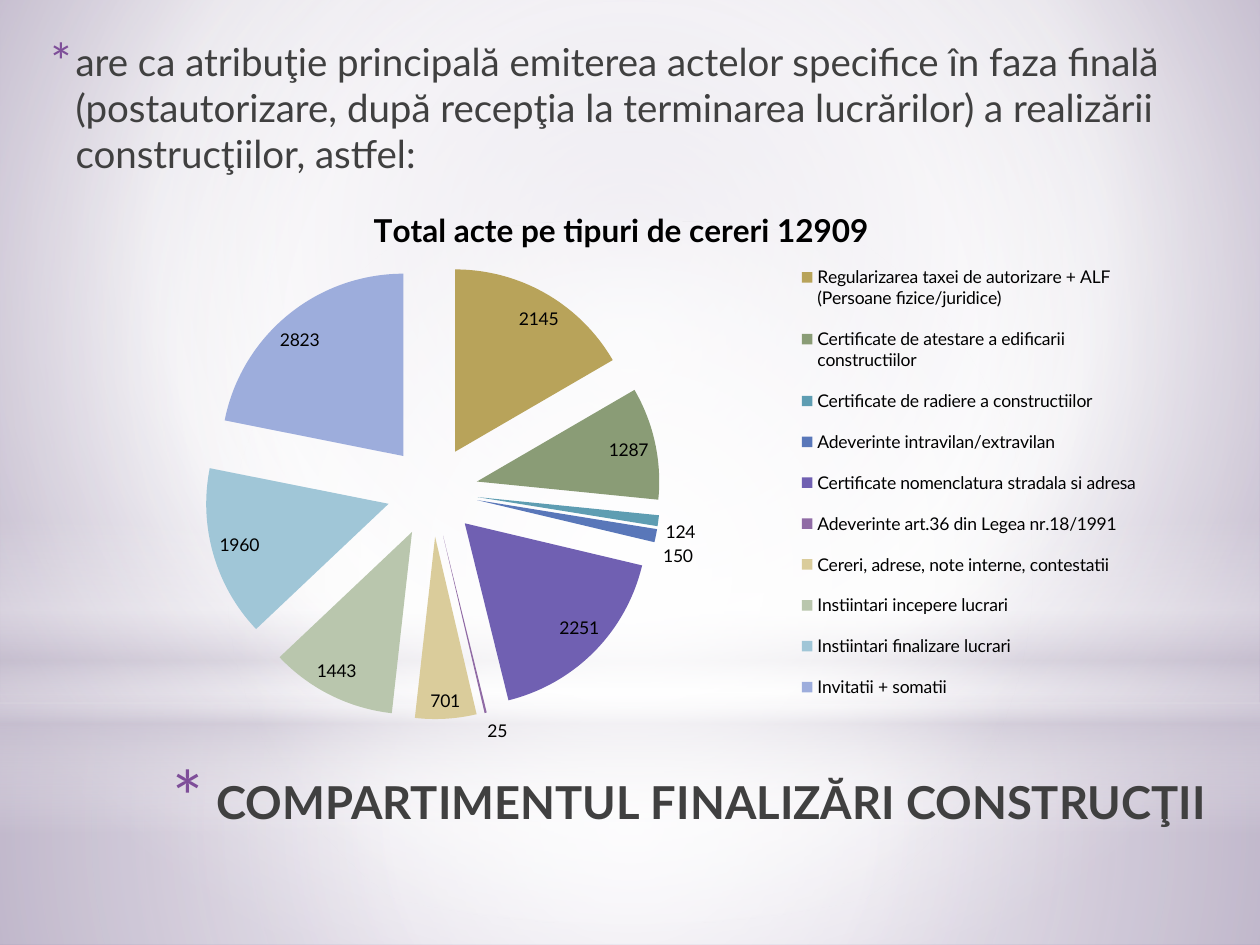
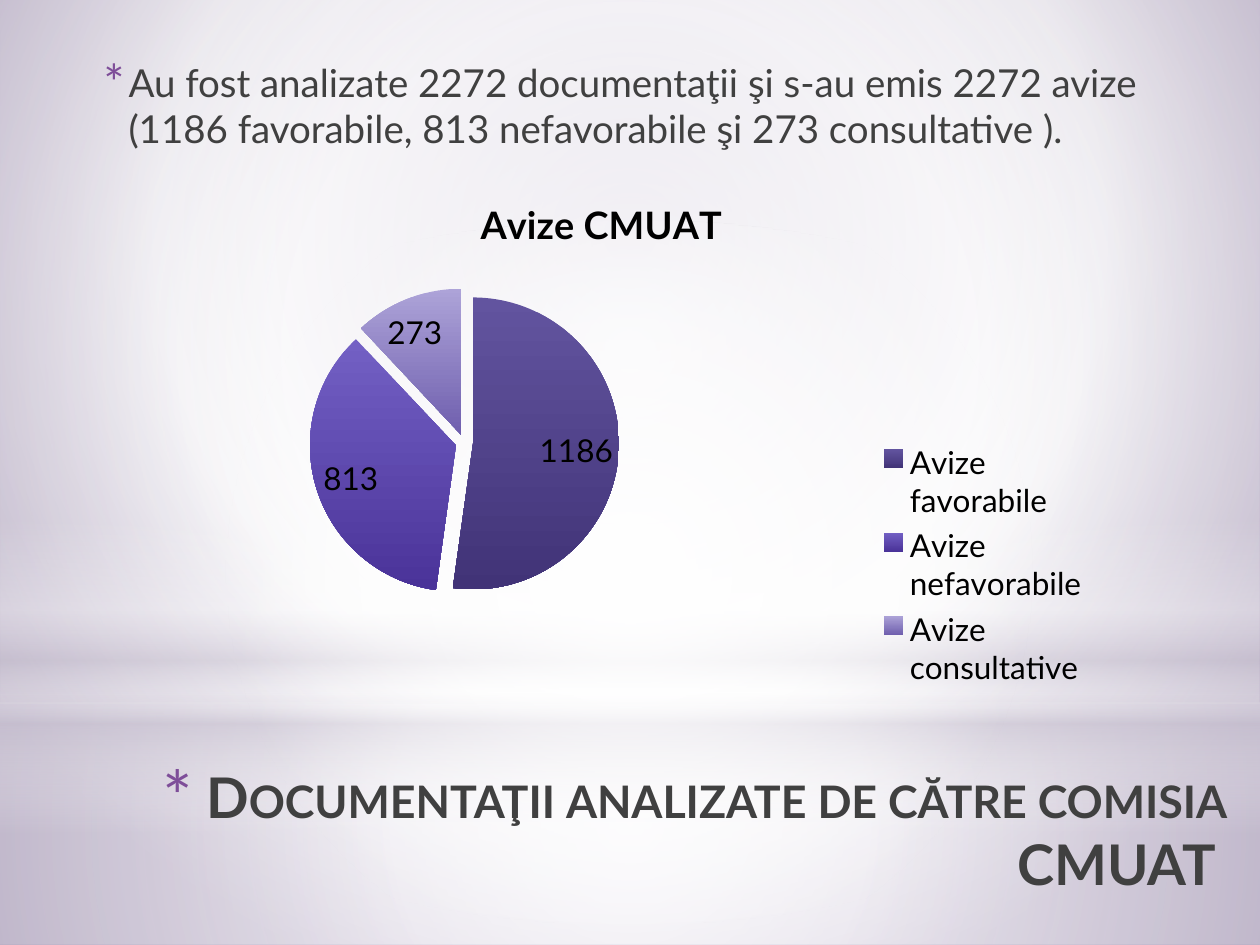
"""Builds two slides on building-permit paperwork, each with a pie chart."""
from lxml.etree import SubElement as Sub
from pptx import Presentation
from pptx.chart.data import CategoryChartData as Data
from pptx.dml.color import RGBColor
from pptx.enum.chart import XL_CHART_TYPE as Kind, XL_LABEL_POSITION as Spot, XL_LEGEND_POSITION as Side
from pptx.enum.shapes import MSO_SHAPE as Form
from pptx.enum.text import MSO_ANCHOR as Anchor, MSO_AUTO_SIZE as Fit, PP_ALIGN as Align
from pptx.oxml import parse_xml
from pptx.oxml.ns import nsdecls, qn
from pptx.util import Inches, Pt

rgb = RGBColor.from_string
FONT, DARK, MARK = "Lato", "404040", "7E4E99"
WHITE, HAZE = "FFFFFF", "C9C2D1"


def paint(root, stops, focus=None):
    """Replace the first solid fill under root by a gradient."""
    dots = "".join(
        f'<a:gs pos="{pos * 1000}"><a:srgbClr val="{tone}"><a:alpha val="{alpha * 1000}"/></a:srgbClr></a:gs>'
        for pos, tone, alpha in stops)
    if focus:
        rect = " ".join(f'{side}="{val * 1000}"' for side, val in zip("ltrb", focus))
        way = f'<a:path path="circle"><a:fillToRect {rect}/></a:path>'
    else:
        way = '<a:lin ang="5400000" scaled="0"/>'
    old = next(root.iter(qn("a:solidFill")))
    old.getparent().replace(old, parse_xml(
        f'<a:gradFill {nsdecls("a")} rotWithShape="1"><a:gsLst>{dots}</a:gsLst>{way}</a:gradFill>'))


def place(part, index, **spots):
    """Give a chart part a manual layout."""
    for old in part.findall(qn("c:layout")):
        part.remove(old)
    modes = {"layoutTarget": "inner"} if part.tag == qn("c:plotArea") else {}
    modes |= {"xMode": "edge", "yMode": "edge"} | spots
    tags = "".join(f'<c:{tag} val="{val}"/>' for tag, val in modes.items())
    part.insert(index, parse_xml(
        f'<c:layout {nsdecls("c")}><c:manualLayout>{tags}</c:manualLayout></c:layout>'))


deck = Presentation()
deck.slide_width, deck.slide_height = Inches(10), Inches(7.5)
master = deck.slide_master
master.background.fill.solid()
paint(master.element, [(0, "C1B7CD", 100), (60, WHITE, 100), (100, "A191B5", 100)], (20, 10, 20, 60))

MID = (50, 50, 50, 50)
BANDS = [
    (Form.RECTANGLE, 5.58, 1.92, [(0, WHITE, 91), (37, WHITE, 76), (100, HAZE, 79)], MID),
    (Form.RECTANGLE, 0, 5.58, [(0, WHITE, 89), (48, WHITE, 62), (100, HAZE, 79)], MID),
    (Form.RECTANGLE, 4.12, 2.5, [(0, WHITE, 0), (29, WHITE, 30), (45, HAZE, 40), (55, WHITE, 26),
                                 (65, HAZE, 60), (100, WHITE, 0)], None),
    (Form.OVAL, 1.75, 5.58, [(0, WHITE, 100), (56, WHITE, 0)], MID),
]

PAGES = [
    {
        "title": ("compartimentul finalizări construcţii", 32.4, (0.75, 6, 8.92, 1.25)),
        "body": ("are ca atribuţie principală emiterea actelor specifice în faza finală (postautorizare, "
                 "după recepţia la terminarea lucrărilor) a realizării construcţiilor, astfel:",
                 22, (0.25, 0.25, 9.33, 1.17)),
        "box": (0.58, 1.42, 8.67, 4.5),
        "name": "Series 1", "head": "Total acte pe tipuri de cereri 12909", "sizes": (10, 18),
        "burst": 25, "over": False,
        "spots": {"title": {"x": 0.27, "y": 0.04},
                  "plot": {"x": 0.033, "y": 0.149, "w": 0.592, "h": 0.804},
                  "legend": {"x": 0.66, "y": 0.12, "w": 0.32, "h": 0.83}},
        "data": [
            ("Regularizarea taxei de autorizare + ALF (Persoane fizice/juridice)", 2145, ["B8A35A"]),
            ("Certificate de atestare a edificarii constructiilor", 1287, ["8A9C76"]),
            ("Certificate de radiere a constructiilor", 124, ["5E9DB2"]),
            ("Adeverinte intravilan/extravilan", 150, ["5977B9"]),
            ("Certificate nomenclatura stradala si adresa", 2251, ["7060B2"]),
            ("Adeverinte art.36 din Legea nr.18/1991", 25, ["906BA5"]),
            ("Cereri, adrese, note interne, contestatii", 701, ["DACC9B"]),
            ("Instiintari incepere lucrari", 1443, ["B9C6AD"]),
            ("Instiintari finalizare lucrari", 1960, ["A0C6D7"]),
            ("Invitatii + somatii", 2823, ["9DADDC"]),
        ],
    },
    {
        "title": ("Documentaţii analizate de către comisia CMUAT ", 32, (0.17, 6, 9.67, 1.25)),
        "body": ("Au fost analizate 2272 documentaţii şi s-au emis 2272 avize "
                 "(1186 favorabile, 813 nefavorabile şi 273 consultative ).", 22, (0.67, 0.42, 8.67, 0.92)),
        "box": (0.83, 1.25, 7.92, 4.25),
        "name": "Avize CMUAT", "head": "Avize CMUAT", "sizes": (18, 21.6),
        "burst": 6, "over": True,
        "spots": {"title": {"x": 0.37, "y": 0.06},
                  "plot": {"x": 0.058, "y": 0.244, "w": 0.605, "h": 0.578},
                  "legend": {"x": 0.77, "y": 0.52, "w": 0.22, "h": 0.48}},
        "data": [
            ("Avize favorabile", 1186, ["62549F", "413377"]),
            ("Avize nefavorabile", 813, ["7360C4", "4A3399"]),
            ("Avize consultative", 273, ["ADA3D8", "6F5FAE"]),
        ],
    },
]

STYLES = {
    "title": {"indent": (0.35, -0.35), "mark": 128, "align": Align.RIGHT, "after": 0, "bold": True, "cap": "small"},
    "body": {"indent": (0.25, -0.2), "mark": 130, "align": Align.LEFT, "after": 3, "bold": False, "cap": "none"},
}

for page in PAGES:
    slide = deck.slides.add_slide(deck.slide_layouts[1])
    if page is PAGES[0]:
        for num, (form, top, high, stops, focus) in enumerate(BANDS):
            band = slide.shapes.add_shape(form, 0, Inches(top), Inches(10), Inches(high))
            band.shadow.inherit = False
            band.line.fill.background()
            band.fill.solid()
            paint(band.element, stops, focus)
            next(band.element.iter(qn("p:cNvPr"))).set("id", str(50 + num))
            master.shapes.element.insert(2 + num, band.element)

    for holder, role in zip(slide.placeholders, STYLES):
        text, size, box = page[role]
        style = STYLES[role]
        holder.left, holder.top, holder.width, holder.height = map(Inches, box)
        frame = holder.text_frame
        for key, val in {"word_wrap": True, "auto_size": Fit.NONE, "vertical_anchor": Anchor.TOP}.items():
            setattr(frame, key, val)
        para = frame.paragraphs[0]
        props = para._p.get_or_add_pPr()
        for key, val in zip(("marL", "indent"), style["indent"]):
            props.set(key, str(Inches(val)))
        Sub(Sub(props, qn("a:buClr")), qn("a:srgbClr"), val=MARK)
        Sub(props, qn("a:buSzPct"), val=str(style["mark"] * 1000))
        Sub(props, qn("a:buFont"), typeface=FONT)
        Sub(props, qn("a:buChar"), char="*")
        for key, val in {"alignment": style["align"], "space_before": Pt(0),
                         "space_after": Pt(style["after"])}.items():
            setattr(para, key, val)
        run = para.add_run()
        run.text = text
        for key, val in {"name": FONT, "size": Pt(size), "bold": style["bold"]}.items():
            setattr(run.font, key, val)
        run.font.color.rgb = rgb(DARK)
        run._r.get_or_add_rPr().set("cap", style["cap"])

    names, counts, tones = zip(*page["data"])
    data = Data()
    data.categories = names
    data.add_series(page["name"], counts)
    chart = slide.shapes.add_chart(Kind.PIE, *map(Inches, page["box"]), data).chart
    small, large = page["sizes"]
    chart.has_title = chart.has_legend = True
    head = chart.chart_title.text_frame
    head.text = page["head"]
    for font, size, bold in ((chart.font, small, False), (head.paragraphs[0].runs[0].font, large, True)):
        for key, val in {"name": FONT, "size": Pt(size), "bold": bold}.items():
            setattr(font, key, val)
        font.color.rgb = rgb("000000")
    chart.legend.position = Side.RIGHT
    chart.legend.include_in_layout = page["over"]

    pie = chart.plots[0]
    pie.vary_by_categories = True
    pie.has_data_labels = True
    pie.data_labels.show_value = True
    pie.data_labels.show_percentage = False
    pie.data_labels.position = Spot.BEST_FIT
    for num, shades in enumerate(tones):
        fill = pie.series[0].points[num].format.fill
        if len(shades) == 1:
            fill.solid()
            fill.fore_color.rgb = rgb(shades[0])
        else:
            fill.gradient()
            fill.gradient_angle = 270
            for stop, shade in zip(fill.gradient_stops, shades):
                stop.color.rgb = rgb(shade)
    root = chart.element
    next(root.iter(qn("c:dPt"))).addprevious(
        parse_xml(f'<c:explosion {nsdecls("c")} val="{page["burst"]}"/>'))
    for tag, index, key in (("c:title", 1, "title"), ("c:plotArea", 0, "plot"), ("c:legend", 1, "legend")):
        place(next(root.iter(qn(tag))), index, **page["spots"][key])

deck.save("out.pptx")
